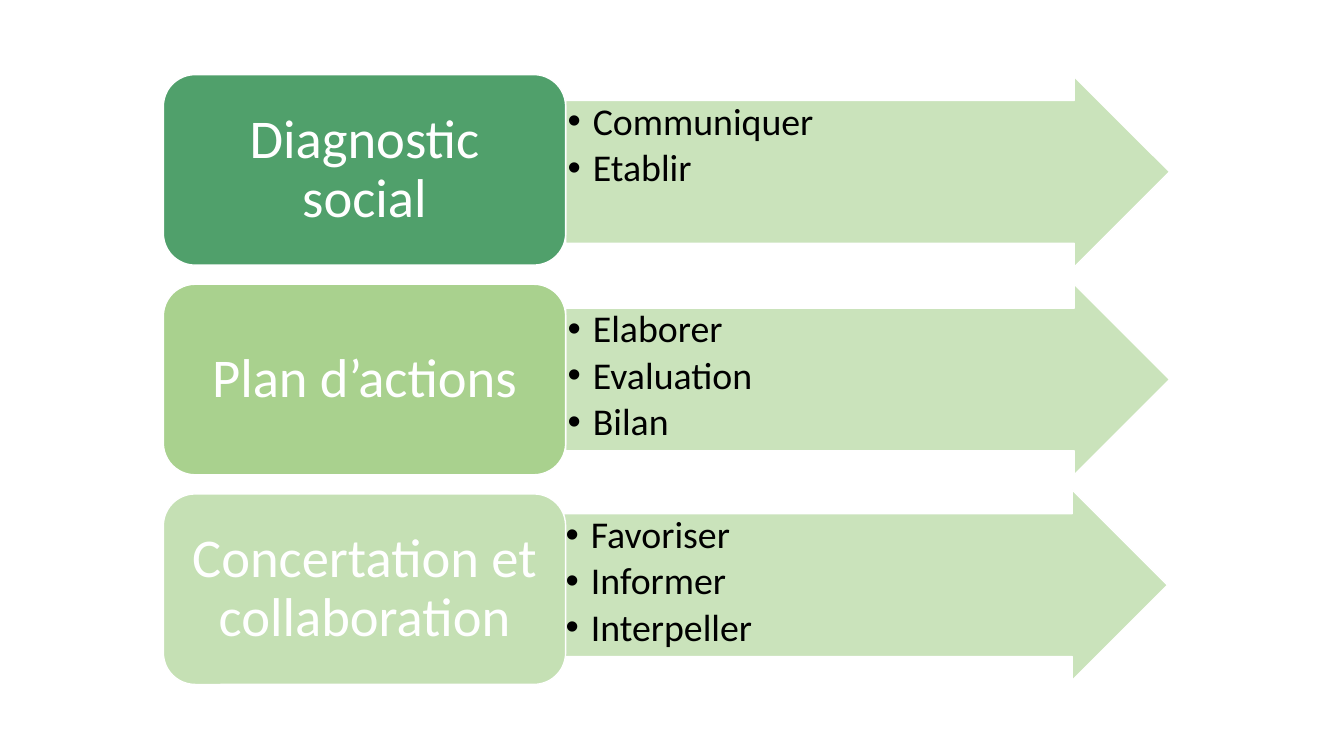
from lxml import etree
from pptx import Presentation
from pptx.dml.color import RGBColor
from pptx.enum import shapes, text
from pptx.oxml.ns import qn
from pptx.util import Inches, Pt

STEPS = [
    ("Diagnostic social", "50A06B", 0.74, 5.61, 0.76,
     ["Communiquer", "Etablir"]),
    ("Plan d’actions", "A9D18E", 2.82, 5.61, 2.82,
     ["Elaborer", "Evaluation", "Bilan"]),
    ("Concertation et collaboration", "C5E0B4", 4.9, 5.59, 4.86,
     ["Favoriser", "Informer", "Interpeller"]),
]
HEIGHT = 1.89


def rgb(value):
    return RGBColor.from_string(value)


def add_block(s, kind, left, top, width, fill, margins):
    sp = s.shapes.add_shape(kind, Inches(left), Inches(top),
                            Inches(width), Inches(HEIGHT))
    sp.shadow.inherit = False
    sp.fill.solid()
    sp.fill.fore_color.rgb = rgb(fill)
    sp.line.color.rgb = rgb("FFFFFF")
    sp.line.width = Pt(1)
    tf = sp.text_frame
    tf.word_wrap = True
    tf.margin_left = tf.margin_right = Inches(margins[0])
    tf.margin_top = tf.margin_bottom = Inches(margins[1])
    return sp


def format_paragraph(p, size, color, align):
    p.alignment = align
    p.line_spacing = 0.9
    for r in p.runs:
        r.font.name = "Calibri"
        r.font.size = Pt(size)
        r.font.color.rgb = rgb(color)


def set_opacity(sp, percent):
    color = sp.fill._xPr.find(qn("a:solidFill"))[0]
    etree.SubElement(color, qn("a:alpha"), val=str(percent * 1000))


def add_bullet(p):
    pPr = p._p.get_or_add_pPr()
    pPr.set("marL", str(Inches(0.25)))
    pPr.set("indent", str(-Inches(0.25)))
    etree.SubElement(pPr, qn("a:buFont"), typeface="Arial")
    etree.SubElement(pPr, qn("a:buChar"), char="•")


def add_arrow(s, left, top, items):
    sp = add_block(s, shapes.MSO_SHAPE.RIGHT_ARROW, left, top, 5.99,
                   "C5E0B4", (0.02, 0.02))
    sp.adjustments[0] = 0.75
    sp.adjustments[1] = 0.5
    set_opacity(sp, 90)
    tf = sp.text_frame
    tf.vertical_anchor = text.MSO_ANCHOR.TOP
    tf.text = "\n".join(items)
    for p in tf.paragraphs:
        add_bullet(p)
        p.level = 1
        p.space_after = Pt(4)
        format_paragraph(p, 27, "000000", text.PP_ALIGN.LEFT)


def add_step(s, title, fill, top):
    sp = add_block(s, shapes.MSO_SHAPE.ROUNDED_RECTANGLE, 1.62, top, 3.99,
                   fill, (0.16, 0.08))
    tf = sp.text_frame
    tf.vertical_anchor = text.MSO_ANCHOR.MIDDLE
    tf.text = title
    format_paragraph(tf.paragraphs[0], 39, "FFFFFF", text.PP_ALIGN.CENTER)


def main():
    prs = Presentation()
    prs.slide_width = Inches(13.33)
    prs.slide_height = Inches(7.5)
    s = prs.slides.add_slide(prs.slide_layouts[6])
    for title, fill, step_top, arrow_left, arrow_top, items in STEPS:
        add_arrow(s, arrow_left, arrow_top, items)
        add_step(s, title, fill, step_top)
    prs.save("out.pptx")


if __name__ == "__main__":
    main()
